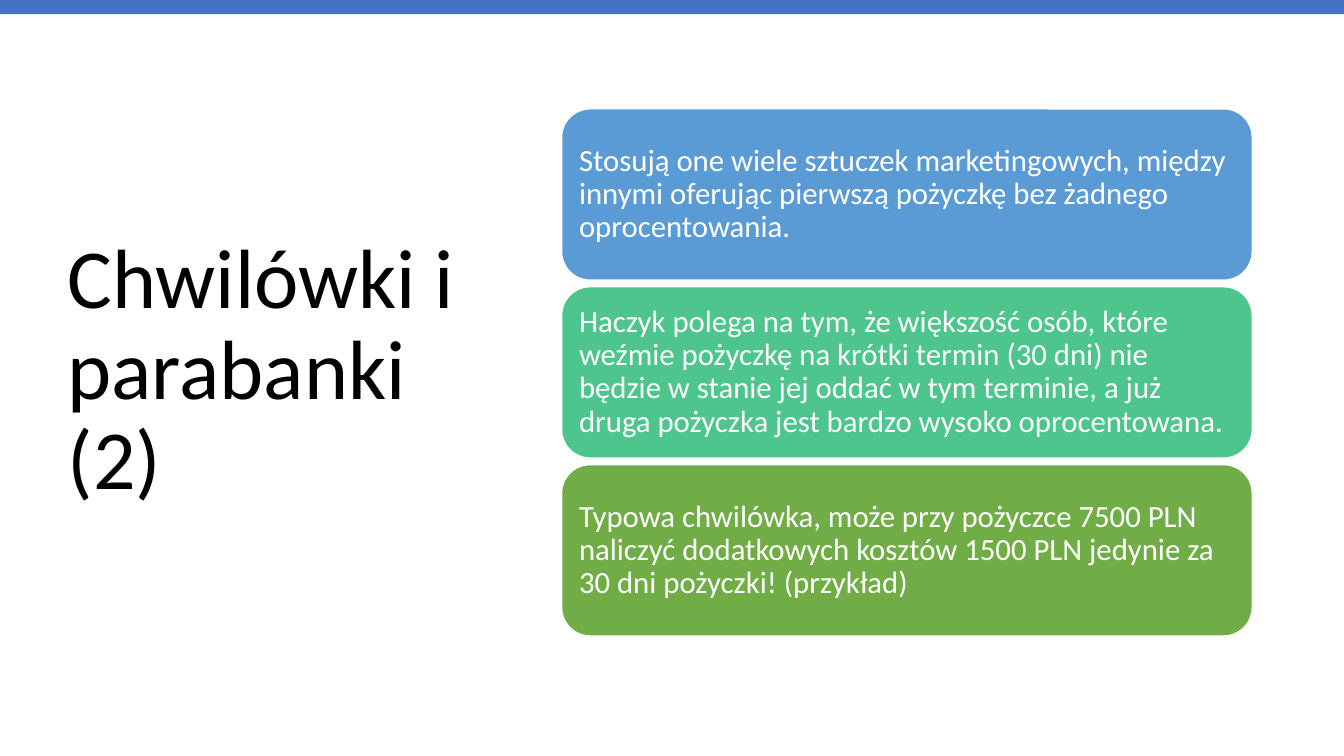
from pptx import Presentation
from pptx.dml.color import RGBColor
from pptx.enum.shapes import MSO_SHAPE
from pptx.enum.text import MSO_ANCHOR, MSO_AUTO_SIZE, PP_ALIGN
from pptx.util import Inches, Pt

BLACK = RGBColor(0x00, 0x00, 0x00)
WHITE = RGBColor(0xFF, 0xFF, 0xFF)
BAR_BLUE = RGBColor(0x44, 0x72, 0xC4)
SKY = RGBColor(0x5B, 0x9B, 0xD5)
MINT = RGBColor(0x4D, 0xC5, 0x8D)
GREEN = RGBColor(0x70, 0xAD, 0x47)

FONT = "Calibri"
PAGE_WIDTH, PAGE_HEIGHT = Inches(13.33), Inches(7.5)
BAR_HEIGHT = Inches(0.14)
CARD_LEFT, CARD_TOP = Inches(5.57), Inches(1.08)
CARD_WIDTH, CARD_HEIGHT = Inches(6.85), Inches(1.7)
CARD_PITCH = Inches(1.765)
CARD_INSET = Inches(0.09)

TITLE = "Chwilówki i parabanki (2)"
CARDS = [
    (SKY, "Stosują one wiele sztuczek marketingowych, między innymi oferując "
          "pierwszą pożyczkę bez żadnego oprocentowania."),
    (MINT, "Haczyk polega na tym, że większość osób, które weźmie pożyczkę na "
           "krótki termin (30 dni) nie będzie w stanie jej oddać w tym terminie, "
           "a już druga pożyczka jest bardzo wysoko oprocentowana."),
    (GREEN, "Typowa chwilówka, może przy pożyczce 7500 PLN naliczyć dodatkowych "
            "kosztów 1500 PLN jedynie za 30 dni pożyczki! (przykład)"),
]


def write_text(box, text, size, color):
    frame = box.text_frame
    frame.word_wrap = True
    frame.auto_size = MSO_AUTO_SIZE.NONE
    frame.vertical_anchor = MSO_ANCHOR.MIDDLE
    para = frame.paragraphs[0]
    para.alignment = PP_ALIGN.LEFT
    para.line_spacing = 0.9
    span = para.add_run()
    span.text = text
    span.font.name = FONT
    span.font.size = Pt(size)
    span.font.color.rgb = color


def add_title(page):
    title = page.shapes.title
    title.left, title.top = Inches(0.57), Inches(0.68)
    title.width, title.height = Inches(4.16), Inches(6.02)
    write_text(title, TITLE, 60, BLACK)


def add_filled_shape(page, kind, left, top, width, height, color):
    shape = page.shapes.add_shape(kind, left, top, width, height)
    shape.shadow.inherit = False
    shape.fill.solid()
    shape.fill.fore_color.rgb = color
    shape.line.fill.background()
    return shape


def add_card(page, row, color, text):
    card = add_filled_shape(page, MSO_SHAPE.ROUNDED_RECTANGLE, CARD_LEFT,
                            CARD_TOP + row * CARD_PITCH, CARD_WIDTH,
                            CARD_HEIGHT, color)
    card.line.color.rgb = WHITE
    card.line.width = Pt(1)
    frame = card.text_frame
    frame.margin_left = frame.margin_right = CARD_INSET
    frame.margin_top = frame.margin_bottom = CARD_INSET
    write_text(card, text, 22, WHITE)


def main():
    deck = Presentation()
    deck.slide_width, deck.slide_height = PAGE_WIDTH, PAGE_HEIGHT
    page = deck.slides.add_slide(deck.slide_layouts[5])
    add_title(page)
    add_filled_shape(page, MSO_SHAPE.RECTANGLE, 0, 0, PAGE_WIDTH, BAR_HEIGHT, BAR_BLUE)
    for row, (color, text) in enumerate(CARDS):
        add_card(page, row, color, text)
    deck.save("out.pptx")


if __name__ == "__main__":
    main()
